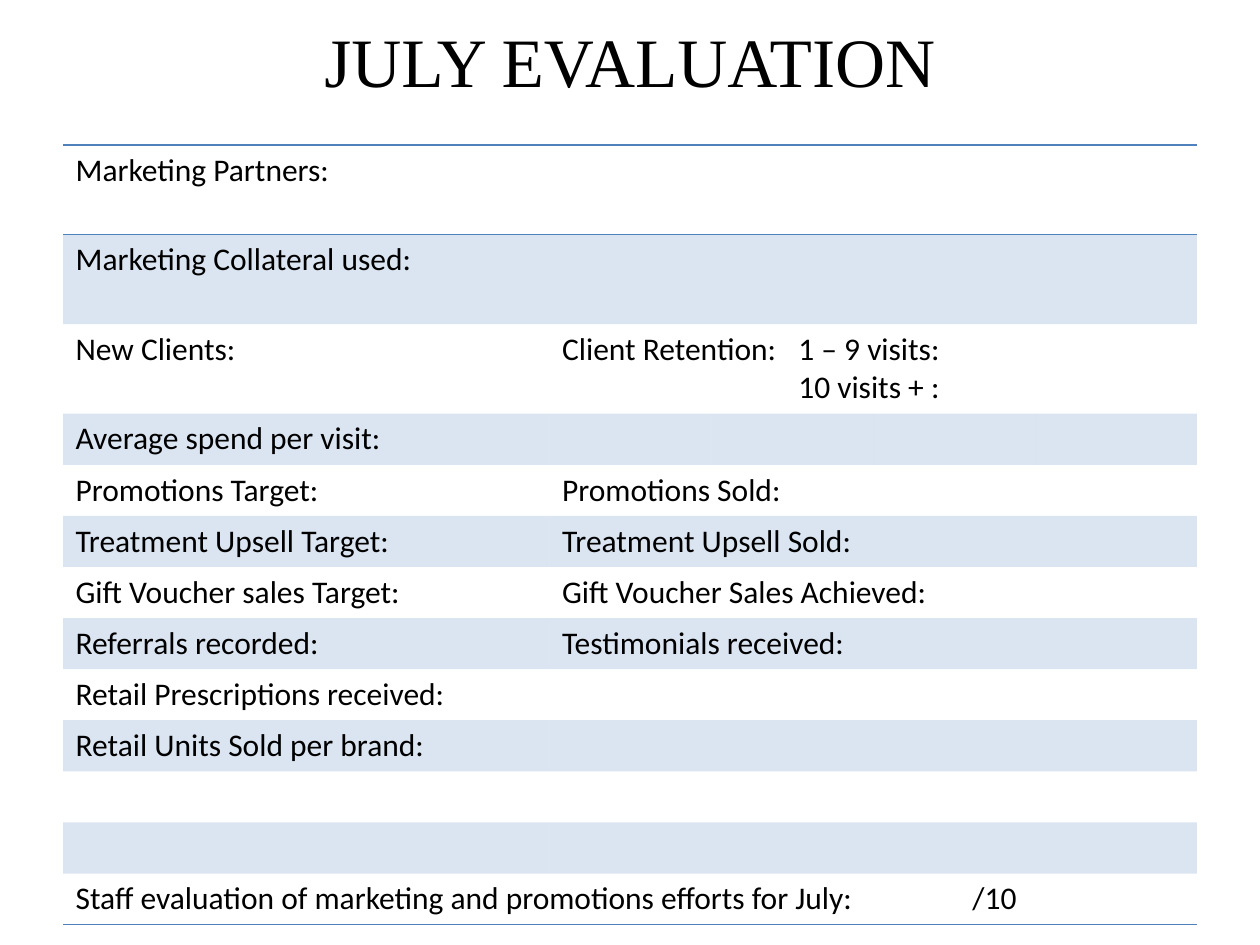
from dataclasses import dataclass

from lxml.etree import SubElement
from pptx import Presentation
from pptx.dml.color import RGBColor
from pptx.enum.text import MSO_ANCHOR, PP_ALIGN
from pptx.oxml.ns import qn
from pptx.util import Pt

BLACK = "000000"
BLUE = "4F81BD"
NO_STYLE = "{2D5ABB26-0587-4C30-8999-92F81FD0307C}"
COLUMN_WIDTHS = [278] + [92.5] * 4
SINGLE, DOUBLE = 29.2, 51.2


@dataclass
class EvaluationRow:
    left: str = ""
    right: str = ""
    spans: tuple[int, ...] = (1, 4)
    height: float = SINGLE
    tab: float = 0
    borders: tuple[str, ...] = ()


FULL = (5,)
SEPARATE = (1,) * 5
ROWS = [
    EvaluationRow("Marketing Partners:", spans=FULL, height=DOUBLE,
                  borders=("lnT", "lnB")),
    EvaluationRow("Marketing Collateral used:", spans=FULL, height=DOUBLE),
    EvaluationRow("New Clients:",
                  "Client Retention:\t1 – 9 visits:\n\t10 visits + :",
                  height=DOUBLE, tab=135),
    EvaluationRow("Average spend per visit:", spans=SEPARATE),
    EvaluationRow("Promotions Target:", "Promotions Sold:"),
    EvaluationRow("Treatment Upsell Target:", "Treatment Upsell Sold:"),
    EvaluationRow("Gift Voucher sales Target:", "Gift Voucher Sales Achieved:"),
    EvaluationRow("Referrals recorded:", "Testimonials received:"),
    EvaluationRow("Retail Prescriptions received:", spans=SEPARATE),
    EvaluationRow("Retail Units Sold per brand:"),
    EvaluationRow(),
    EvaluationRow(),
    EvaluationRow(
        "Staff evaluation of marketing and promotions efforts for July:\t/10",
        spans=FULL, tab=512.5, borders=("lnB",)),
]


def color(value: str) -> RGBColor:
    return RGBColor.from_string(value)


def format_text(text_frame, font_name: str, size: float) -> None:
    for paragraph in text_frame.paragraphs:
        for run in paragraph.runs:
            run.font.name = font_name
            run.font.size = Pt(size)
            run.font.color.rgb = color(BLACK)


def add_tab_stop(paragraph, position: float) -> None:
    tab_list = SubElement(paragraph._p.get_or_add_pPr(), qn("a:tabLst"))
    SubElement(tab_list, qn("a:tab"), pos=str(Pt(position)), algn="l")


def add_border(cell, side: str) -> None:
    line = SubElement(cell._tc.get_or_add_tcPr(), qn(f"a:{side}"), w=str(Pt(1)))
    fill = SubElement(line, qn("a:solidFill"))
    SubElement(fill, qn("a:srgbClr"), val=BLUE)


def fill_cell(cell, shaded: bool) -> None:
    if not shaded:
        cell.fill.background()
        return
    cell.fill.solid()
    cell.fill.fore_color.rgb = color(BLUE)
    color_element = cell._tc.tcPr.find(".//" + qn("a:srgbClr"))
    SubElement(color_element, qn("a:alpha"), val="20000")


def write_cell(cell, text: str, tab: float) -> None:
    cell.text_frame.text = text
    for paragraph in cell.text_frame.paragraphs:
        if tab and "\t" in paragraph.text:
            add_tab_stop(paragraph, tab)
        paragraph.font.size = Pt(18)
    format_text(cell.text_frame, "Calibri", 18)


def draw_row(table, index: int, row: EvaluationRow) -> None:
    table.rows[index].height = Pt(row.height)
    for cell in table.rows[index].cells:
        for side in row.borders:
            add_border(cell, side)
        fill_cell(cell, shaded=index % 2 == 1)
    start = 0
    texts = [row.left, row.right] + [""] * 3
    for span, text in zip(row.spans, texts):
        cell = table.cell(index, start)
        if span > 1:
            cell.merge(table.cell(index, start + span - 1))
        write_cell(cell, text, row.tab)
        start += span


def draw_title(slide) -> None:
    title = slide.shapes.add_textbox(Pt(36), Pt(9.4), Pt(648), Pt(50))
    text_frame = title.text_frame
    text_frame.word_wrap = True
    text_frame.vertical_anchor = MSO_ANCHOR.MIDDLE
    text_frame.text = "JULY EVALUATION"
    text_frame.paragraphs[0].alignment = PP_ALIGN.CENTER
    format_text(text_frame, "Times New Roman", 39.6)


def draw_table(slide) -> None:
    frame = slide.shapes.add_table(
        len(ROWS), len(COLUMN_WIDTHS), Pt(36), Pt(82.8),
        Pt(sum(COLUMN_WIDTHS)), Pt(sum(row.height for row in ROWS)))
    table = frame.table
    table.first_row = False
    table.horz_banding = False
    table._tbl.tblPr.find(qn("a:tableStyleId")).text = NO_STYLE
    for column, width in zip(table.columns, COLUMN_WIDTHS):
        column.width = Pt(width)
    for index, row in enumerate(ROWS):
        draw_row(table, index, row)


def main() -> None:
    presentation = Presentation()
    presentation.slide_width = Pt(720)
    presentation.slide_height = Pt(540)
    slide = presentation.slides.add_slide(presentation.slide_layouts[6])
    # Heading
    draw_title(slide)
    # Evaluation form
    draw_table(slide)
    presentation.save("out.pptx")


if __name__ == "__main__":
    main()
